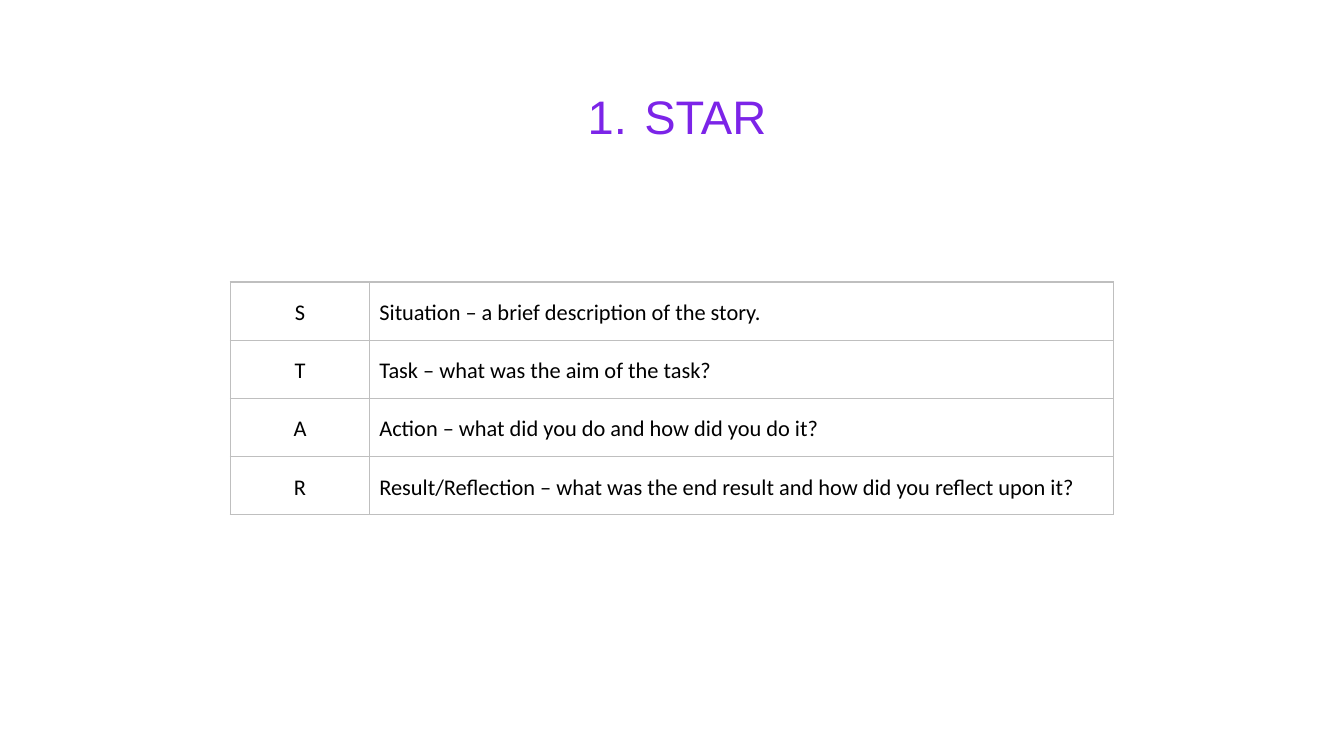
from dataclasses import dataclass

from lxml.etree import SubElement as Sub
from pptx import Presentation
from pptx.dml.color import RGBColor as Rgb
from pptx.enum.text import MSO_ANCHOR as Anchor, PP_ALIGN as Align
from pptx.oxml.ns import qn
from pptx.util import Cm, Pt

HUES = {"title": "7C24E8", "text": "000000", "rule": "BFBFBF"}
ROW_H = Cm(1.1)
COLS = (Cm(2.64), Cm(14.05))


@dataclass
class Step:
    key: str
    note: str


STEPS = [
    Step("S", "Situation – a brief description of the story."),
    Step("T", "Task – what was the aim of the task?"),
    Step("A", "Action – what did you do and how did you do it?"),
    Step("R", "Result/Reflection – what was the end result and how did you reflect upon it?"),
]


def style(para, face: str, size: float, hue: str, align: Align) -> None:
    para.alignment = align
    for run in para.runs:
        run.font.name = face
        run.font.size = Pt(size)
        run.font.color.rgb = Rgb.from_string(HUES[hue])


def number(para) -> None:
    """Give the paragraph an automatic number with a hanging indent."""
    props = para._p.get_or_add_pPr()
    props.set("marL", str(Cm(1.27)))
    props.set("indent", str(Cm(-1.07)))
    hue = Sub(props, qn("a:buClr"))
    Sub(hue, qn("a:srgbClr"), val=HUES["title"])
    Sub(props, qn("a:buFont"), typeface="Arial")
    Sub(props, qn("a:buAutoNum"), type="arabicPeriod")


def add_title(slide, text: str) -> None:
    box = slide.shapes.add_textbox(Cm(0.86), Cm(1.37), Cm(23.67), Cm(1.6))
    frame = box.text_frame
    frame.word_wrap = True
    frame.vertical_anchor = Anchor.BOTTOM
    frame.margin_left = frame.margin_right = Cm(0.25)
    frame.margin_top = frame.margin_bottom = Cm(0.25)
    frame.text = text
    para = frame.paragraphs[0]
    style(para, "Arial", 25.2, "title", Align.CENTER)
    number(para)


def edge(cell) -> None:
    """Draw a thin rule on all four sides, ahead of the fill in the XML."""
    props = cell._tc.get_or_add_tcPr()
    for place, side in enumerate(("lnL", "lnR", "lnT", "lnB")):
        line = Sub(props, qn(f"a:{side}"), w=str(Pt(0.75)))
        fill = Sub(line, qn("a:solidFill"))
        Sub(fill, qn("a:srgbClr"), val=HUES["rule"])
        props.insert(place, line)


def fill_cell(cell, text: str, align: Align) -> None:
    cell.fill.background()
    edge(cell)
    cell.margin_left = cell.margin_right = Cm(0.18)
    cell.margin_top = cell.margin_bottom = Cm(0.25)
    cell.text_frame.text = text
    para = cell.text_frame.paragraphs[0]
    para.line_spacing = 1.15
    style(para, "Calibri", 12, "text", align)


def add_steps(slide, steps: list[Step]) -> None:
    frame = slide.shapes.add_table(
        len(steps), len(COLS), Cm(4.35), Cm(5.33), sum(COLS), ROW_H * len(steps))
    table = frame.table
    table.first_row = table.horz_banding = False
    for col, width in zip(table.columns, COLS):
        col.width = width
    for row, step in zip(table.rows, steps):
        row.height = ROW_H
        fill_cell(row.cells[0], step.key, Align.CENTER)
        fill_cell(row.cells[1], step.note, Align.JUSTIFY)


def main() -> None:
    deck = Presentation()
    deck.slide_width, deck.slide_height = Cm(25.4), Cm(14.29)
    slide = deck.slides.add_slide(deck.slide_layouts[6])
    add_title(slide, "STAR")
    add_steps(slide, STEPS)
    deck.save("out.pptx")


if __name__ == "__main__":
    main()
